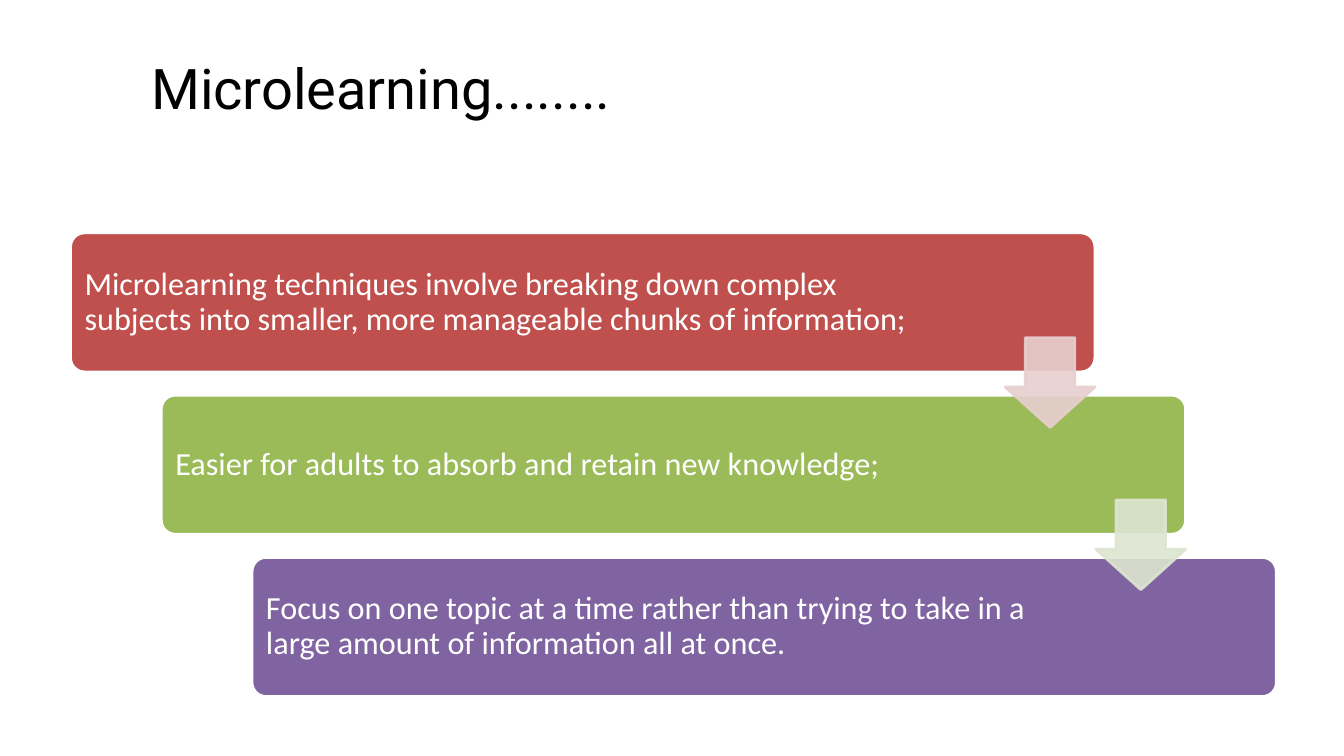
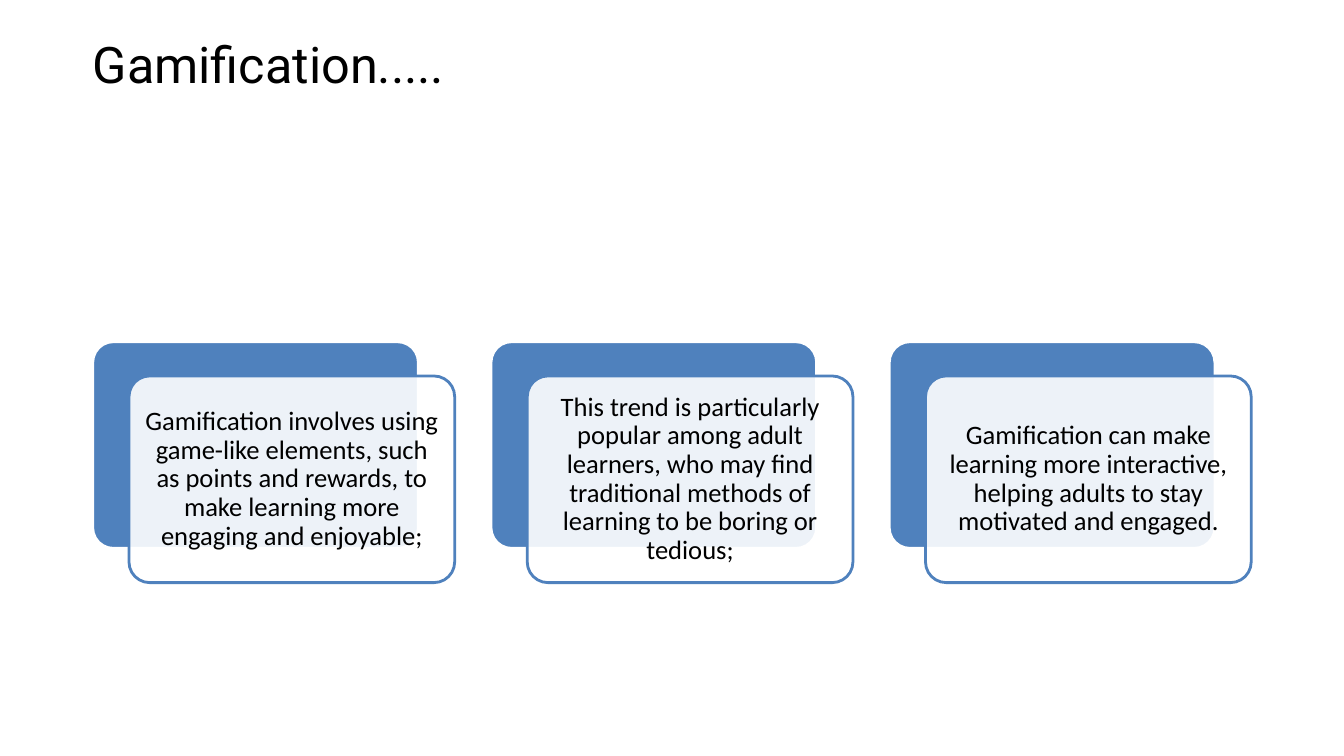
from dataclasses import dataclass

from lxml import etree
from pptx import Presentation
from pptx.dml.color import RGBColor
from pptx.enum.shapes import MSO_SHAPE
from pptx.enum.text import MSO_ANCHOR, PP_ALIGN
from pptx.oxml.ns import qn
from pptx.util import Inches, Pt

ROUND_RECT = MSO_SHAPE.ROUNDED_RECTANGLE
DOWN_ARROW = MSO_SHAPE.DOWN_ARROW
TOP, MIDDLE = MSO_ANCHOR.TOP, MSO_ANCHOR.MIDDLE
LEFT, CENTER = PP_ALIGN.LEFT, PP_ALIGN.CENTER


@dataclass(frozen=True)
class Theme:
    title_font: str = "Roboto"
    body_font: str = "Calibri"
    black: str = "000000"
    white: str = "FFFFFF"
    red: str = "BF504D"
    green: str = "9BBB59"
    purple: str = "8064A2"
    blue: str = "4F81BD"
    pale_red: str = "E7CFCF"
    pale_green: str = "DDE5D0"
    step_size: int = 23
    card_size: int = 19
    outline: int = 2
    corner: float = 0.1
    opacity: int = 90
    line_spacing: float = 0.9


THEME = Theme()

# Each step: text, fill, space kept free at the right
STEPS = [
    ("Microlearning techniques involve breaking down complex subjects into "
     "smaller, more manageable chunks of information;", THEME.red, 1.51),
    ("Easier for adults to absorb and retain new knowledge;",
     THEME.green, 1.89),
    ("Focus on one topic at a time rather than trying to take in a large "
     "amount of information all at once.", THEME.purple, 1.89),
]
CARDS = [
    "Gamification involves using game-like elements, such as points and "
    "rewards, to make learning more engaging and enjoyable;",
    "This trend is particularly popular among adult learners, who may find "
    "traditional methods of learning to be boring or tedious;",
    "Gamification can make learning more interactive, helping adults to stay "
    "motivated and engaged.",
]


def set_opacity(parent):
    """Make the solid fill directly inside a shape or line element translucent."""
    color = parent.find(qn("a:solidFill")).find(qn("a:srgbClr"))
    alpha = etree.SubElement(color, qn("a:alpha"))
    alpha.set("val", str(THEME.opacity * 1000))


def set_text(s, text, font, size, color, insets, anchor=MIDDLE, align=LEFT,
             spacing=None):
    """Write one paragraph; insets are left, top, right, bottom in inches."""
    tf = s.text_frame
    tf.word_wrap = True
    tf.vertical_anchor = anchor
    (tf.margin_left, tf.margin_top,
     tf.margin_right, tf.margin_bottom) = map(Inches, insets)
    p = tf.paragraphs[0]
    p.text = text
    p.alignment = align
    p.line_spacing = spacing
    p.font.name = font
    p.font.size = Pt(size)
    p.font.color.rgb = RGBColor.from_string(color)


def add_title(slide, text, size, box, anchor):
    s = slide.shapes.add_textbox(*map(Inches, box))
    set_text(s, text, THEME.title_font, size, THEME.black, (0,) * 4, anchor)


def add_block(slide, kind, box, fill, line):
    s = slide.shapes.add_shape(kind, *map(Inches, box))
    s.shadow.inherit = False
    s.fill.solid()
    s.fill.fore_color.rgb = RGBColor.from_string(fill)
    s.line.color.rgb = RGBColor.from_string(line)
    s.line.width = Pt(THEME.outline)
    if kind == ROUND_RECT:
        s.adjustments[0] = THEME.corner
    return s


def add_step(slide, box, text, fill, right_inset):
    s = add_block(slide, ROUND_RECT, box, fill, THEME.white)
    set_text(s, text, THEME.body_font, THEME.step_size, THEME.white,
             (0.1, 0.1, right_inset, 0.1), spacing=THEME.line_spacing)


def add_arrow(slide, box, color):
    s = add_block(slide, DOWN_ARROW, box, color, color)
    s.adjustments[0] = 0.55
    s.adjustments[1] = 0.45
    properties = s._element.spPr
    set_opacity(properties)
    set_opacity(properties.find(qn("a:ln")))


def add_card(slide, left, top, text):
    """Add a translucent text card over an offset solid backing."""
    width, height = 3.23, 2.05
    add_block(slide, ROUND_RECT, (left, top, width, height),
              THEME.blue, THEME.white)
    s = add_block(slide, ROUND_RECT, (left + 0.36, top + 0.34, width, height),
                  THEME.white, THEME.blue)
    set_opacity(s._element.spPr)
    set_text(s, text, THEME.body_font, THEME.card_size, THEME.black,
             (0.08,) * 4, align=CENTER, spacing=THEME.line_spacing)


def build_microlearning(slide):
    add_title(slide, "Microlearning........", 40, (1.5, 0.38, 10.98, 0.96),
              MIDDLE)
    width, height, arrow = 10.16, 1.38, 0.89
    corners = [(0.7 + 0.9 * i, 2.31 + 1.61 * i) for i in range(len(STEPS))]
    for (left, top), step in zip(corners, STEPS):
        add_step(slide, (left, top, width, height), *step)
    for (left, top), color in zip(corners, (THEME.pale_red, THEME.pale_green)):
        add_arrow(slide, (left + width - arrow, top + 1.04, arrow, arrow),
                  color)


def build_gamification(slide):
    add_title(slide, "Gamification.....", 36, (0.92, 0.33, 10.75, 1.19), TOP)
    for i, text in enumerate(CARDS):
        add_card(slide, 0.92 + 3.95 * i, 3.39, text)


def main():
    prs = Presentation()
    prs.slide_width, prs.slide_height = Inches(13.33), Inches(7.5)
    blank = prs.slide_layouts[6]
    for build in (build_microlearning, build_gamification):
        build(prs.slides.add_slide(blank))
    prs.save("out.pptx")


if __name__ == "__main__":
    main()
